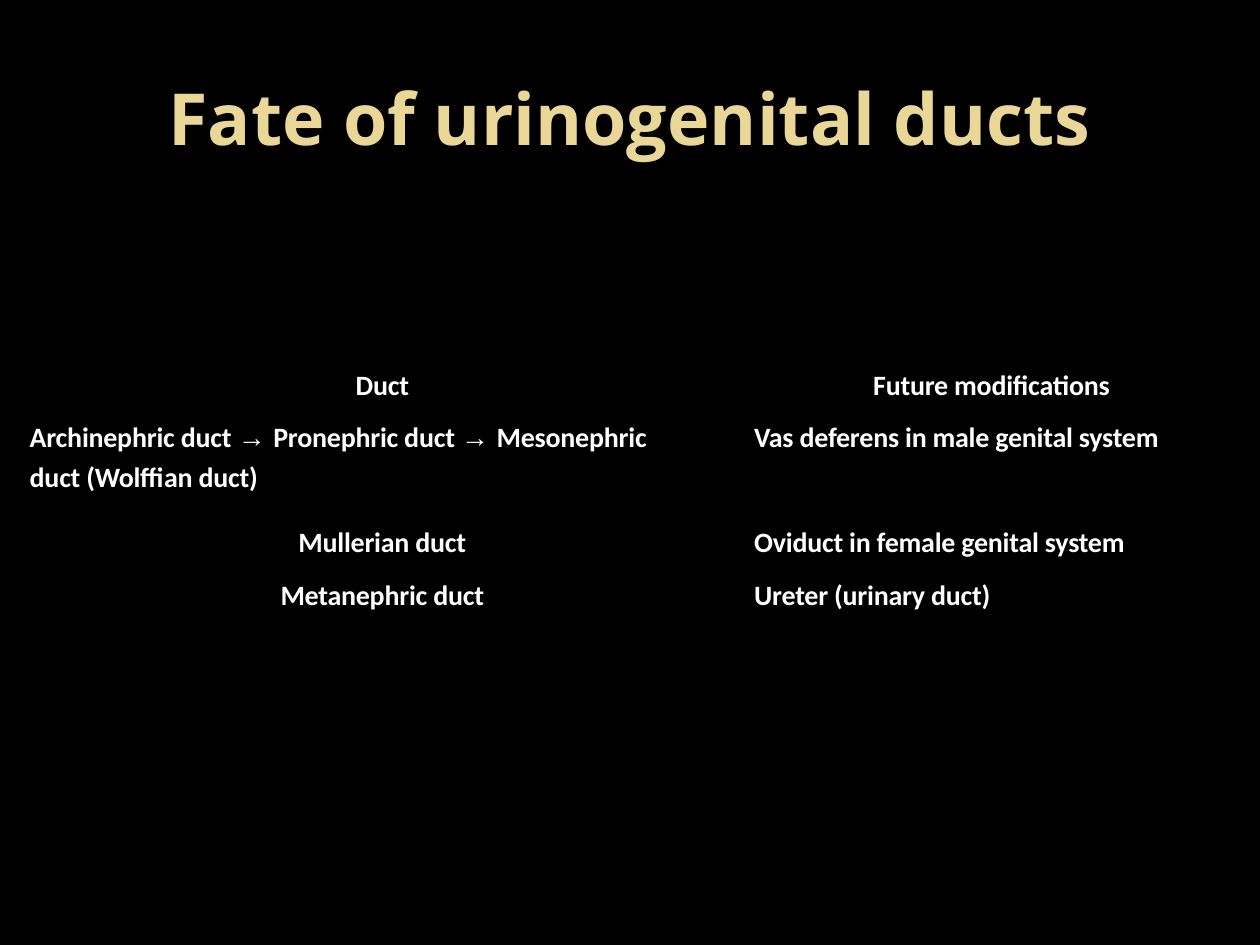
from lxml import etree
from pptx import Presentation
from pptx.dml.color import RGBColor
from pptx.enum.text import MSO_ANCHOR, PP_ALIGN
from pptx.oxml.ns import qn
from pptx.util import Pt

CENTER, LEFT = PP_ALIGN.CENTER, PP_ALIGN.LEFT
MIDDLE = MSO_ANCHOR.MIDDLE
BLACK = RGBColor(0x00, 0x00, 0x00)
WHITE = RGBColor(0xFF, 0xFF, 0xFF)
GOLD = RGBColor(0xEA, 0xD6, 0x96)

TITLE = "Fate of urinogenital ducts"
ARROW = "→ "
# Each cell: paragraphs, left indent (None means centred)
ROWS = [
    [(["Duct"], None), (["Future modifications"], 74)],
    [(["Archinephric duct → Pronephric duct → Mesonephric",
       "duct (Wolffian duct)"], 5),
     (["Vas deferens in male genital system"], 6)],
    [(["Mullerian duct"], None), (["Oviduct in female genital system"], 6)],
    [(["Metanephric duct"], None), (["Ureter (urinary duct)"], 6)],
]
COL_WIDTHS = [413, 277]
ROW_HEIGHTS = [30, 60, 30, 30]
TABLE_LEFT, TABLE_TOP = 12, 210


def add_text(p, text, font="Calibri", size=16, color=WHITE, bold=True,
             align=LEFT, spacing=0):
    p.alignment = align
    r = p.add_run()
    r.text = text
    r.font.name, r.font.size, r.font.bold = font, Pt(size), bold
    r.font.color.rgb = color
    if spacing:
        r.font._element.set("spc", str(round(spacing * 100)))


def add_borders(cell, color, width):
    tc_pr = cell._tc.get_or_add_tcPr()
    for i, side in enumerate(("a:lnL", "a:lnR", "a:lnT", "a:lnB")):
        ln = etree.Element(qn(side), w=str(Pt(width)))
        fill = etree.SubElement(ln, qn("a:solidFill"))
        etree.SubElement(fill, qn("a:srgbClr"), val=str(color))
        tc_pr.insert(i, ln)


def fill_cell(cell, paragraphs, indent):
    cell.margin_left = cell.margin_right = cell.margin_bottom = 0
    cell.margin_top = Pt(0.7)
    cell.fill.background()
    add_borders(cell, BLACK, 1)
    tf = cell.text_frame
    for i, text in enumerate(paragraphs):
        p = tf.add_paragraph() if i else tf.paragraphs[0]
        p.space_before = Pt(2.9 if i else 0.7)
        if indent is not None:
            p._p.get_or_add_pPr().set("marL", str(Pt(indent)))
        align = CENTER if indent is None else LEFT
        for j, part in enumerate(text.split(ARROW)):
            if j:
                add_text(p, ARROW, font="Arial", bold=False, align=align,
                         spacing=-0.1)
            add_text(p, part, align=align, spacing=-0.1)


prs = Presentation()
prs.slide_width, prs.slide_height = Pt(720), Pt(540)
s = prs.slides.add_slide(prs.slide_layouts[5])
s.background.fill.solid()
s.background.fill.fore_color.rgb = BLACK

title = s.shapes.title
title.left, title.top, title.width, title.height = Pt(36), Pt(21.6), Pt(648), Pt(90)
title.text_frame.vertical_anchor = MIDDLE
add_text(title.text_frame.paragraphs[0], TITLE, font="Open Sans", size=41,
         color=GOLD, align=CENTER)

table = s.shapes.add_table(
    len(ROWS), len(COL_WIDTHS), Pt(TABLE_LEFT), Pt(TABLE_TOP),
    Pt(sum(COL_WIDTHS)), Pt(sum(ROW_HEIGHTS))).table
table.first_row = table.horz_banding = False
for column, width in zip(table.columns, COL_WIDTHS):
    column.width = Pt(width)
for row, height, cells in zip(table.rows, ROW_HEIGHTS, ROWS):
    row.height = Pt(height)
    for cell, (paragraphs, indent) in zip(row.cells, cells):
        fill_cell(cell, paragraphs, indent)

prs.save("out.pptx")
